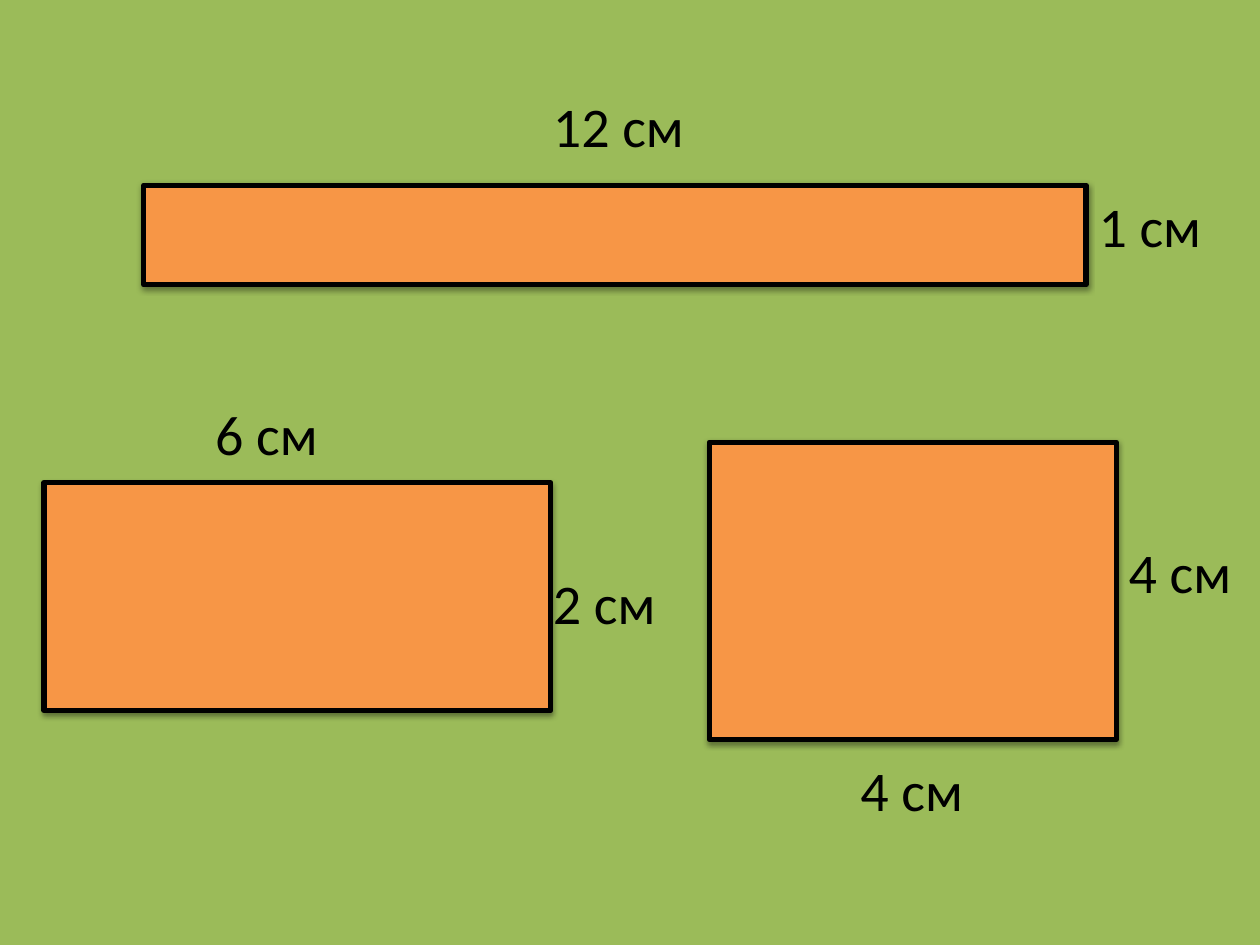
from lxml.etree import SubElement
from pptx import Presentation
from pptx.dml.color import RGBColor
from pptx.enum.shapes import MSO_SHAPE
from pptx.enum.text import MSO_AUTO_SIZE as AUTO
from pptx.oxml.ns import qn
from pptx.util import Inches, Pt


def rgb(value):
    return RGBColor.from_string(value)


class Board:
    font = "Calibri"
    size = 32
    ink = "000000"
    fill = "F79646"
    background = "9BBB59"

    def __init__(self, prs):
        self.slide = prs.slides.add_slide(prs.slide_layouts[6])
        bg = self.slide.background.fill
        bg.solid()
        bg.fore_color.rgb = rgb(self.background)

    def rectangle(self, left, top, width, height):
        box = [Inches(v) for v in (left, top, width, height)]
        sp = self.slide.shapes.add_shape(MSO_SHAPE.RECTANGLE, *box)
        sp.fill.solid()
        sp.fill.fore_color.rgb = rgb(self.fill)
        sp.line.color.rgb = rgb(self.ink)
        sp.line.width = Pt(3)
        self.shadow(sp)

    def shadow(self, sp):
        sp.shadow.inherit = False
        effects = sp._element.spPr.find(qn("a:effectLst"))
        outer = SubElement(effects, qn("a:outerShdw"), blurRad=str(Pt(3.1)),
                           dist=str(Pt(1.6)), dir="5400000", rotWithShape="0")
        color = SubElement(outer, qn("a:srgbClr"), val=self.ink)
        SubElement(color, qn("a:alpha"), val="38000")

    def label(self, text, left, top, width=1.02, wrap=False):
        box = [Inches(v) for v in (left, top, width, 0.64)]
        tf = self.slide.shapes.add_textbox(*box).text_frame
        tf.text = text
        tf.word_wrap = wrap
        tf.auto_size = AUTO.SHAPE_TO_FIT_TEXT
        r = tf.paragraphs[0].runs[0]
        r.font.name = self.font
        r.font.size = Pt(self.size)
        r.font.color.rgb = rgb(self.ink)


def main():
    prs = Presentation()
    prs.slide_width, prs.slide_height = Inches(10), Inches(7.5)
    board = Board(prs)

    board.rectangle(1.14, 1.47, 7.48, 0.79)
    board.label("12 см", 4.29, 0.68, width=1.25)
    board.label("1 см", 8.62, 1.47)

    board.rectangle(0.35, 3.83, 4.02, 1.81)
    board.label("6 см", 1.61, 3.12)
    board.label("2 см", 4.29, 4.46)

    board.rectangle(5.63, 3.51, 3.23, 2.36)
    board.label("4 см", 6.73, 5.95)
    board.label("4 см", 8.86, 4.22, width=1.14, wrap=True)

    prs.save("out.pptx")


if __name__ == "__main__":
    main()
